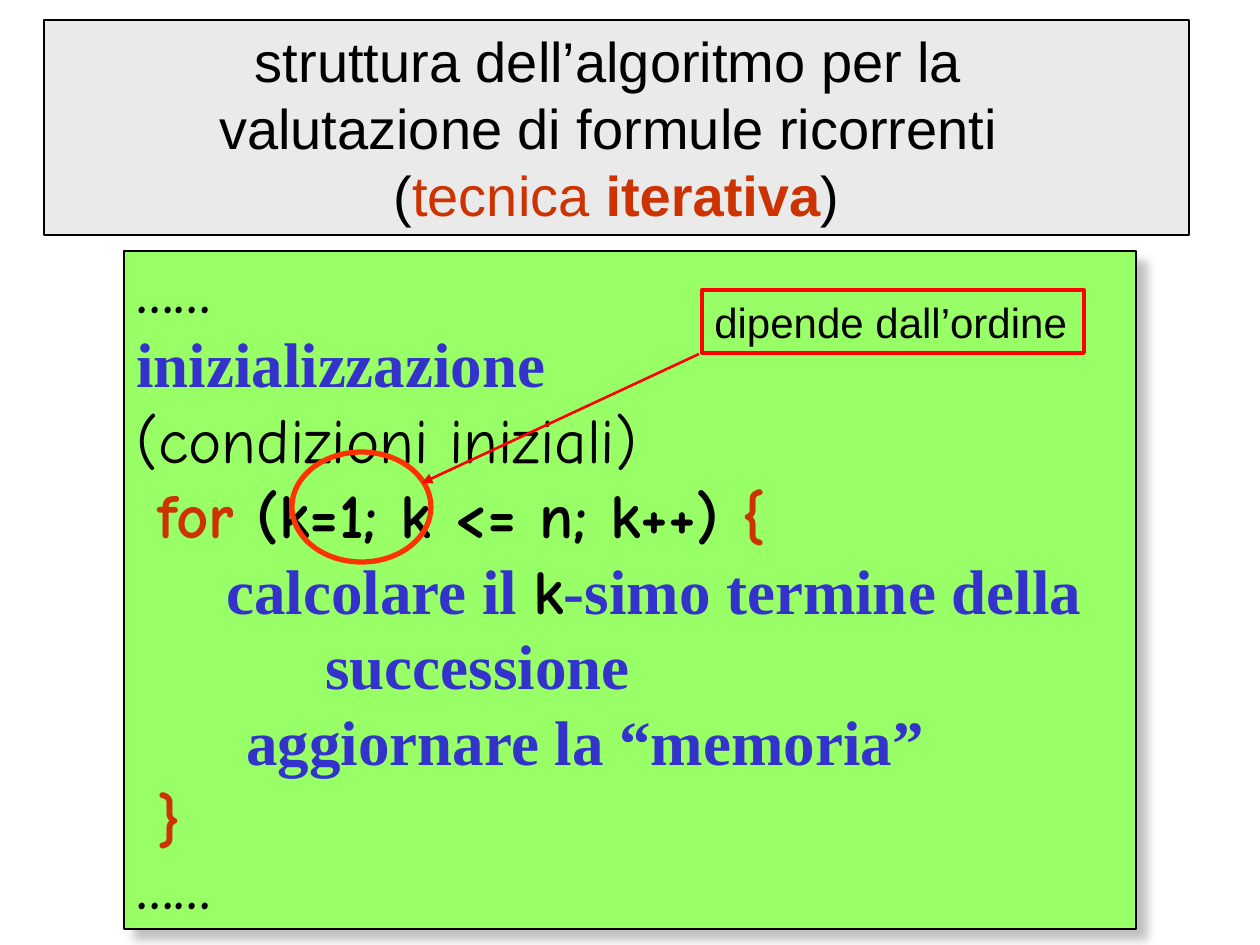
import pptx
import pptx.dml.color
import pptx.enum.shapes
import pptx.enum.text
import pptx.oxml
import pptx.oxml.ns
import pptx.util

PX = 914400 // 126
LEADING = 1.2
COLORS = {
    "black": "000000", "blue": "3333CC", "rust": "CC3300", "gray": "EAEAEA",
    "green": "99FF66", "red": "FF0000", "orange": "FF3300", "shadow": "808080",
}
SANS, CODE, SERIF = "Arial", "Comic Neue", "Times New Roman"

# Content: each line is (indent in px, size, spans); a span is (text, font, color, bold)
TITLE = [
    (0, 32, [("struttura dell’algoritmo per la ", SANS, "black", False)]),
    (0, 32, [("valutazione di formule ricorrenti ", SANS, "black", False)]),
    (0, 32, [("(", SANS, "black", False), ("tecnica ", SANS, "rust", False),
             ("iterativa", SANS, "rust", True), (")", SANS, "black", False)]),
]
ALGORITHM = [
    (0, 32, [("……", CODE, "black", True)]),
    (0, 36, [("inizializzazione", SERIF, "blue", True)]),
    (0, 36, [("(condizioni iniziali)", CODE, "black", False)]),
    (21, 36, [("for", CODE, "rust", True), (" (k=1; k <= n; k++) ", CODE, "black", True),
              ("{", CODE, "rust", True)]),
    (90, 36, [("calcolare il ", SERIF, "blue", True), ("k", CODE, "black", True),
              ("-simo termine della", SERIF, "blue", True)]),
    (189, 36, [("successione", SERIF, "blue", True)]),
    (110, 36, [("aggiornare la “memoria”", SERIF, "blue", True)]),
    (21, 36, [("}", CODE, "rust", True)]),
    (0, 32, [("……", CODE, "black", True)]),
]
LABEL = [(0, 24, [("dipende dall’ordine", SANS, "black", False)])]

# Places: left, top, width, height in px
TITLE_AT = (44, 20, 1145, 215)
ALGORITHM_AT = (124, 251, 1012, 678)
CIRCLE_AT = (292, 452, 139, 110)
LABEL_AT = (702, 290, 382, 63)
ARROW = (699, 354, 422, 483)


def emu(lengths):
    return [length * PX for length in lengths]


def rgb(name):
    return pptx.dml.color.RGBColor.from_string(COLORS[name])


def outline(shape, color, width):
    shape.line.color.rgb = rgb(color)
    shape.line.width = pptx.util.Pt(width)


def paint(shape, fill, line, width):
    if fill:
        shape.fill.solid()
        shape.fill.fore_color.rgb = rgb(fill)
    else:
        shape.fill.background()
    outline(shape, line, width)


def write(shape, lines, align="LEFT", wrap=False):
    frame = shape.text_frame
    frame.word_wrap = wrap
    frame.auto_size = pptx.enum.text.MSO_AUTO_SIZE.NONE
    frame.vertical_anchor = pptx.enum.text.MSO_ANCHOR.TOP
    for number, (indent, size, spans) in enumerate(lines):
        para = frame.add_paragraph() if number else frame.paragraphs[0]
        para.alignment = getattr(pptx.enum.text.PP_ALIGN, align)
        para.line_spacing = pptx.util.Pt(size * LEADING)
        para.space_before = para.space_after = pptx.util.Pt(0)
        if indent:
            para._p.get_or_add_pPr().set("marL", str(indent * PX))
        for text, font, color, bold in spans:
            span = para.add_run()
            span.text = text
            span.font.name = font
            span.font.size = pptx.util.Pt(size)
            span.font.bold = bold
            span.font.color.rgb = rgb(color)


def add_box(page, kind, place, fill, line, width):
    box = page.shapes.add_shape(kind, *emu(place))
    box.shadow.inherit = False
    paint(box, fill, line, width)
    return box


def main():
    deck = pptx.Presentation()
    deck.slide_width, deck.slide_height = pptx.util.Inches(10), pptx.util.Inches(7.5)
    page = deck.slides.add_slide(deck.slide_layouts[5])
    shapes = pptx.enum.shapes.MSO_SHAPE
    namespace = pptx.oxml.ns.nsdecls("a")

    # Title
    title = page.shapes.title
    title.left, title.top, title.width, title.height = emu(TITLE_AT)
    paint(title, "gray", "black", 0.75)
    write(title, TITLE, align="CENTER", wrap=True)

    # Algorithm panel with its drop shadow
    panel = add_box(page, shapes.RECTANGLE, ALGORITHM_AT, "green", "black", 0.75)
    write(panel, ALGORITHM)
    effects = panel._element.spPr.find(pptx.oxml.ns.qn("a:effectLst"))
    effects.append(pptx.oxml.parse_xml(
        f'<a:outerShdw {namespace} blurRad="63500" dist="107950" dir="2700000">'
        f'<a:srgbClr val="{COLORS["shadow"]}"><a:alpha val="50000"/></a:srgbClr>'
        '</a:outerShdw>'))

    # Circled start value and its label
    add_box(page, shapes.OVAL, CIRCLE_AT, None, "orange", 3)
    label = add_box(page, shapes.RECTANGLE, LABEL_AT, None, "red", 2.25)
    write(label, LABEL)

    # Arrow from label to circle
    arrow = page.shapes.add_connector(
        pptx.enum.shapes.MSO_CONNECTOR.STRAIGHT, *emu(ARROW))
    outline(arrow, "red", 1.5)
    arrow.line._get_or_add_ln().append(
        pptx.oxml.parse_xml(f'<a:tailEnd {namespace} type="triangle"/>'))
    arrow._element.spPr.append(pptx.oxml.parse_xml(f'<a:effectLst {namespace}/>'))

    deck.save("out.pptx")


if __name__ == "__main__":
    main()
